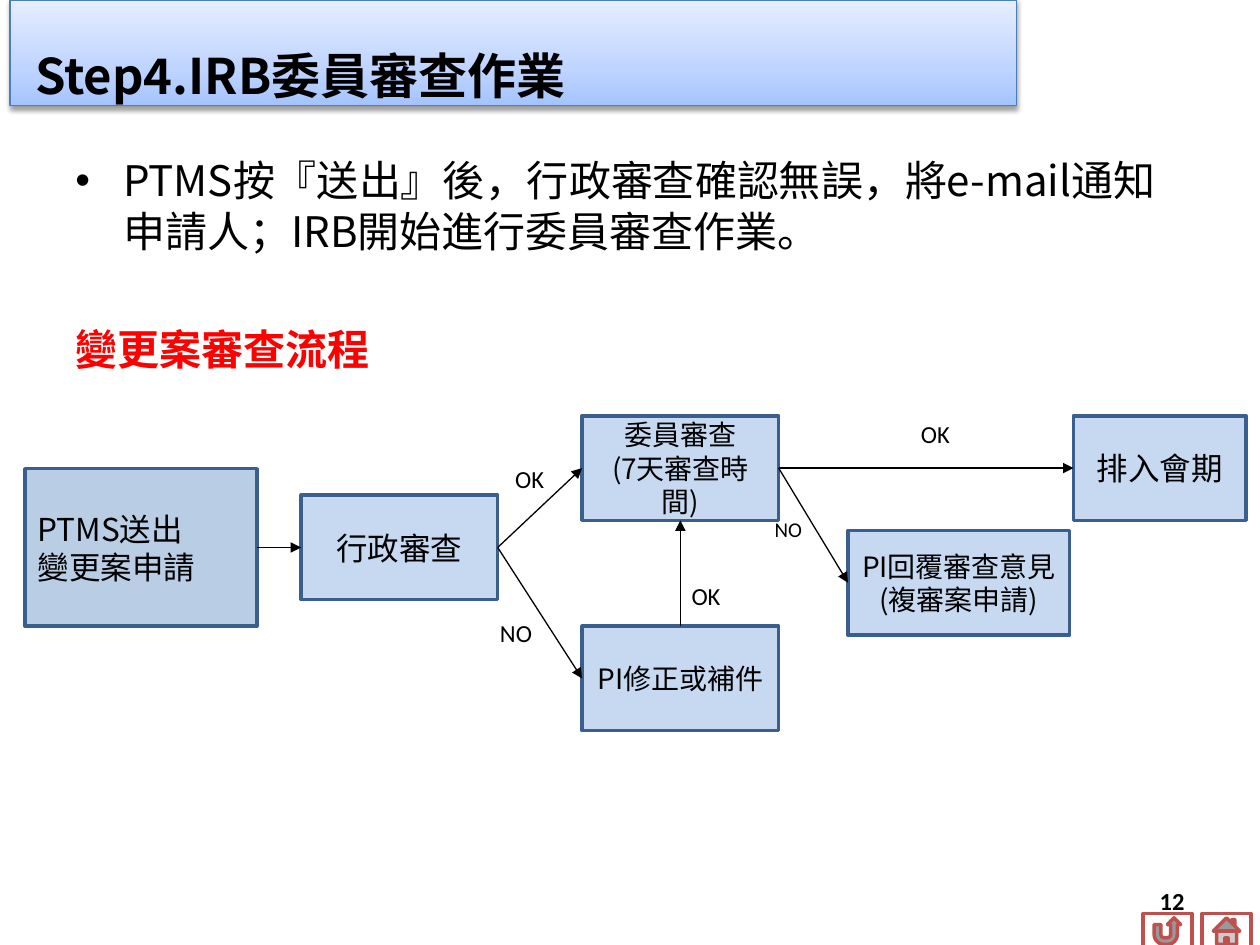
from copy import deepcopy

from lxml import etree
from pptx import Presentation
from pptx import util as u
from pptx.dml.color import RGBColor
from pptx.enum import shapes, text
from pptx.oxml import ns

COLS, ROWS = 100, 75
CJK, LATIN = "Noto Sans CJK SC", "Calibri"
BLACK = RGBColor(0, 0, 0)
WHITE = RGBColor(255, 255, 255)
RED = RGBColor(255, 0, 0)
BRICK = RGBColor(0xC0, 0x50, 0x4D)
NAVY = RGBColor(0x3A, 0x5F, 0x8C)
TITLE_EDGE = RGBColor(0x4B, 0x7E, 0xBC)
START_BLUE = RGBColor(0xB9, 0xCD, 0xE5)
NODE_BLUE = RGBColor(0xC6, 0xD9, 0xF1)
TITLE_STOPS = [
    (0, RGBColor(0xA4, 0xC4, 0xFF)),
    (0.35, RGBColor(0xBF, 0xD4, 0xFF)),
    (1, RGBColor(0xE6, 0xEE, 0xFF)),
]

prs = Presentation()
prs.slide_width, prs.slide_height = u.Inches(10), u.Inches(7.5)
CELL_W, CELL_H = prs.slide_width / COLS, prs.slide_height / ROWS


def place(box, x=0, y=0, w=None, h=None):
    left, top, width, height = box
    w = width if w is None else w
    h = height if h is None else h
    return (int((left + x) * CELL_W), int((top + y) * CELL_H),
            int(w * CELL_W), int(h * CELL_H))


def write(sp, content, size, font=CJK, color=BLACK, bold=False,
          align=text.PP_ALIGN.LEFT, anchor=text.MSO_ANCHOR.TOP):
    tf = sp.text_frame
    tf.word_wrap = True
    tf.vertical_anchor = anchor
    tf.text = content
    for p in tf.paragraphs:
        p.alignment = align
        if font == CJK:
            p.line_spacing = u.Pt(size * 1.2)
        for r in p.runs:
            r.font.size, r.font.name, r.font.bold = u.Pt(size), font, bold
            r.font.color.rgb = color
            ea = etree.SubElement(r._r.get_or_add_rPr(), ns.qn("a:ea"))
            ea.set("typeface", font)
    return tf


def add_block(s, kind, position, fill, edge, width):
    sp = s.shapes.add_shape(kind, *position)
    sp.shadow.inherit = False
    sp.fill.solid()
    sp.fill.fore_color.rgb = fill
    sp.line.color.rgb = edge
    sp.line.width = u.Pt(width)
    return sp


def add_buttons(s, box):
    kinds = (shapes.MSO_SHAPE.ACTION_BUTTON_RETURN, shapes.MSO_SHAPE.ACTION_BUTTON_HOME)
    for i, kind in enumerate(kinds):
        add_block(s, kind, place(box, x=i * 4.7, w=3.9), WHITE, BRICK, 2)


def add_title(s, box):
    sp = add_block(s, shapes.MSO_SHAPE.RECTANGLE, place(box), WHITE, TITLE_EDGE, 0.75)
    sp.fill.gradient()
    sp.fill.gradient_angle = 90
    first = sp.fill.gradient_stops[0]._gs
    first.addnext(deepcopy(first))
    for stop, (position, color) in zip(sp.fill.gradient_stops, TITLE_STOPS):
        stop.position = position
        stop.color.rgb = color
    effects = sp._element.spPr.find(ns.qn("a:effectLst"))
    shadow = etree.SubElement(effects, ns.qn("a:outerShdw"), blurRad=str(u.Pt(3.1)),
                              dist=str(u.Pt(1.6)), dir="5400000", rotWithShape="0")
    color = etree.SubElement(shadow, ns.qn("a:srgbClr"), val=str(BLACK))
    etree.SubElement(color, ns.qn("a:alpha"), val="38000")
    tf = write(sp, "Step4.IRB委員審查作業", 28, bold=True, anchor=text.MSO_ANCHOR.BOTTOM)
    tf.margin_left, tf.margin_bottom = u.Inches(0.2), u.Inches(0.01)


def add_body(s, box):
    sp = s.shapes.add_textbox(*place(box))
    tf = write(sp, "PTMS按『送出』後，行政審查確認無誤，將e-mail通知申請人；"
                   "IRB開始進行委員審查作業。\n變更案審查流程", 24)
    bullet, heading = tf.paragraphs
    pPr = bullet._p.get_or_add_pPr()
    pPr.set("marL", str(u.Inches(0.38)))
    pPr.set("indent", str(u.Inches(-0.38)))
    etree.SubElement(pPr, ns.qn("a:buFont"), typeface="Arial")
    etree.SubElement(pPr, ns.qn("a:buChar"), char="•")
    heading.space_before = u.Pt(39)
    heading.runs[0].font.bold = True
    heading.runs[0].font.color.rgb = RED


def add_arrow(s, start, start_site, end, end_site):
    line = s.shapes.add_connector(shapes.MSO_CONNECTOR.STRAIGHT, 0, 0, 0, 0)
    line.begin_connect(start, start_site)
    line.end_connect(end, end_site)
    line.line.color.rgb = BLACK
    line.line.width = u.Pt(0.75)
    etree.SubElement(line.line._get_or_add_ln(), ns.qn("a:tailEnd"), type="triangle")
    etree.SubElement(line._element.spPr, ns.qn("a:effectLst"))


def add_flow(s, box):
    row_h, node_w = 8.3, 15.6
    steps = {
        "submit": ("PTMS送出\n變更案申請", 18, 0, 4.2, 18.4, 12.5),
        "admin": ("行政審查", 18, 21.9, 6.3, node_w, row_h),
        "review": ("委員審查\n(7天審查時間)", 16, 44.2, 0, node_w, row_h),
        "revise": ("PI修正或補件", 16, 44.2, 16.7, node_w, row_h),
        "meeting": ("排入會期", 18, 83.2, 0, 13.7, row_h),
        "reply": ("PI回覆審查意見\n(複審案申請)", 16, 65.3, 9.1, 17.6, row_h),
    }
    nodes = {}
    for name, (label, size, *cell) in steps.items():
        is_start = name == "submit"
        sp = add_block(s, shapes.MSO_SHAPE.RECTANGLE, place(box, *cell),
                       START_BLUE if is_start else NODE_BLUE, NAVY, 2)
        write(sp, label, size, anchor=text.MSO_ANCHOR.MIDDLE,
              align=text.PP_ALIGN.LEFT if is_start else text.PP_ALIGN.CENTER)
        nodes[name] = sp

    top, left, bottom, right = range(4)
    for start, start_site, end, end_site in (
        ("submit", right, "admin", left),
        ("admin", right, "revise", left),
        ("admin", right, "review", left),
        ("revise", top, "review", bottom),
        ("review", right, "reply", left),
        ("review", right, "meeting", left),
    ):
        add_arrow(s, nodes[start], start_site, nodes[end], end_site)

    for label, size, x, y in (
        ("OK", 14, 37.9, 3.3),
        ("NO", 14, 36.7, 15.6),
        ("OK", 14, 51.9, 12.6),
        ("OK", 14, 70.1, -0.2),
        ("NO", 12, 58.5, 7.5),
    ):
        write(s.shapes.add_textbox(*place(box, x, y, 5.4, 4)), label, size, LATIN)


def add_page_number(s, box):
    write(s.shapes.add_textbox(*place(box)), "12", 14, LATIN, bold=True,
          align=text.PP_ALIGN.RIGHT, anchor=text.MSO_ANCHOR.MIDDLE)


def main():
    s = prs.slides.add_slide(prs.slide_layouts[6])
    add_buttons(s, (90.7, 72.5, 8.6, 2.8))
    add_body(s, (5, 11.8, 89.5, 55.2))
    add_page_number(s, (71.7, 69.5, 23.3, 4))
    add_title(s, (0.8, 0, 79.9, 8.4))
    add_flow(s, (2, 33, 96.9, 25))
    prs.save("out.pptx")


if __name__ == "__main__":
    main()
